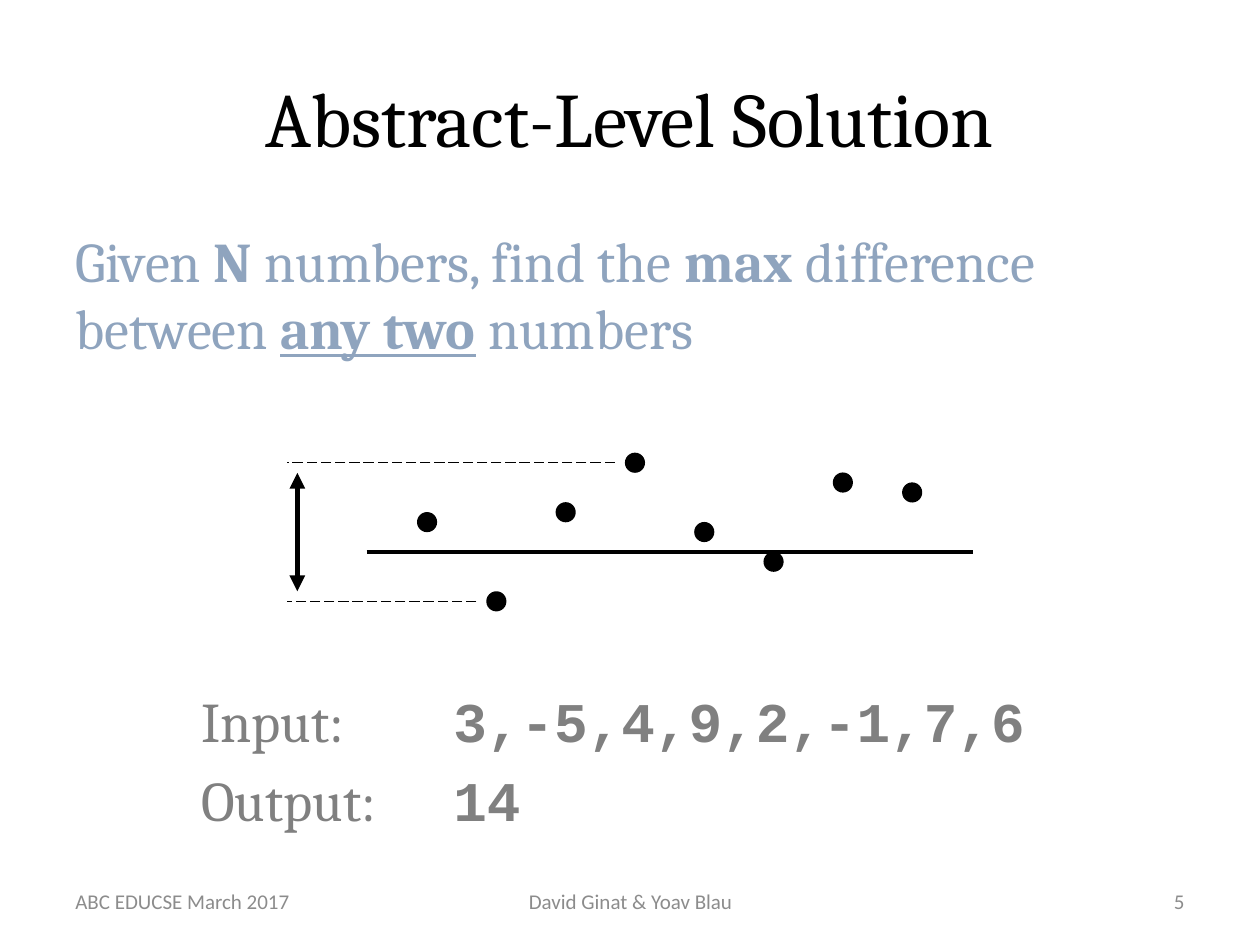
from typing import NamedTuple

from lxml import etree
from pptx import Presentation
from pptx.dml.color import RGBColor
from pptx.enum.dml import MSO_LINE
from pptx.enum.shapes import MSO_CONNECTOR, MSO_SHAPE
from pptx.enum.text import MSO_ANCHOR, PP_ALIGN
from pptx.oxml.ns import qn
from pptx.util import Inches, Pt

LEFT, CENTER, RIGHT = PP_ALIGN.LEFT, PP_ALIGN.CENTER, PP_ALIGN.RIGHT
TOP, MIDDLE = MSO_ANCHOR.TOP, MSO_ANCHOR.MIDDLE
OVAL, RECTANGLE = MSO_SHAPE.OVAL, MSO_SHAPE.RECTANGLE
STRAIGHT, LONG_DASH = MSO_CONNECTOR.STRAIGHT, MSO_LINE.LONG_DASH

SERIF, MONO, SANS = "Cambria", "Courier New", "Calibri"
BLACK, WHITE, NAVY, GRAY = "000000", "FFFFFF", "1F497D", "8C8C8C"

NUMBERS = [3, -5, 4, 9, 2, -1, 7, 6]

# Dot grid: one column per number, one row per unit of value
FIRST_X, COLUMN = 3.39, 0.55
ZERO_Y, UNIT = 4.38, 1.1 / 14
DOT = 0.16
AXIS_START, AXIS_END = 2.91, 7.72
GUIDE_X, ARROW_X = 2.28, 2.36


class Box(NamedTuple):
    left: float
    top: float
    width: float
    height: float

    def inches(self) -> list:
        return [Inches(length) for length in self]


class Run(NamedTuple):
    text: str
    bold: bool = False
    underline: bool = False
    font: str = ""


class Footer(NamedTuple):
    box: Box
    text: str
    align: PP_ALIGN


FOOTERS = [
    Footer(Box(0.5, 6.95, 2.33, 0.4), "ABC EDUCSE March 2017", LEFT),
    Footer(Box(3.42, 6.95, 3.17, 0.4), "David Ginat & Yoav Blau", CENTER),
    Footer(Box(7.17, 6.95, 2.33, 0.4), "5", RIGHT),
]

TASK = [
    Run("Given "), Run("N", bold=True), Run(" numbers, find the "),
    Run("max", bold=True), Run(" difference between "),
    Run("any two", bold=True, underline=True), Run(" numbers"),
]
EXAMPLE = [
    [Run("Input:\t"), Run(",".join(map(str, NUMBERS)), bold=True, font=MONO)],
    [Run("Output:\t"),
     Run(str(max(NUMBERS) - min(NUMBERS)), bold=True, font=MONO)],
]


def rgb(color: str) -> RGBColor:
    return RGBColor.from_string(color)


def write(frame, paragraphs: list[list[Run]], *, size: float, color: str,
          font: str = SERIF, align: PP_ALIGN = LEFT, anchor: MSO_ANCHOR = TOP,
          before: float = 0, tab: float = 0) -> None:
    frame.word_wrap = True
    frame.vertical_anchor = anchor
    for index, runs in enumerate(paragraphs):
        paragraph = frame.add_paragraph() if index else frame.paragraphs[0]
        paragraph.alignment = align
        paragraph.space_before = Pt(before)
        if tab:
            stops = etree.SubElement(paragraph._p.get_or_add_pPr(), qn("a:tabLst"))
            etree.SubElement(stops, qn("a:tab"), pos=str(Inches(tab)), algn="l")
        for part in runs:
            run = paragraph.add_run()
            run.text = part.text
            run.font.name = part.font or font
            run.font.size = Pt(size)
            run.font.bold = part.bold
            run.font.underline = part.underline
            run.font.color.rgb = rgb(color)


def add_text(slide, box: Box, paragraphs: list[list[Run]], **style) -> None:
    write(slide.shapes.add_textbox(*box.inches()).text_frame, paragraphs, **style)


def add_filled(slide, kind: MSO_SHAPE, box: Box, color: str,
               opacity: int = 100) -> None:
    shape = slide.shapes.add_shape(kind, *box.inches())
    shape.shadow.inherit = False
    shape.line.fill.background()
    shape.fill.solid()
    shape.fill.fore_color.rgb = rgb(color)
    if opacity < 100:
        tint = shape.fill._xPr.find(".//" + qn("a:srgbClr"))
        etree.SubElement(tint, qn("a:alpha"), val=str(opacity * 1000))


def add_line(slide, start: tuple[float, float], end: tuple[float, float],
             width: float, dash: MSO_LINE | None = None,
             arrows: bool = False) -> None:
    line = slide.shapes.add_connector(
        STRAIGHT, *(Inches(length) for length in (*start, *end)))
    line.line.color.rgb = rgb(BLACK)
    line.line.width = Pt(width)
    if dash:
        line.line.dash_style = dash
    if arrows:
        for tip in ("a:headEnd", "a:tailEnd"):
            etree.SubElement(line.line._get_or_add_ln(), qn(tip), type="triangle")
    etree.SubElement(line._element.spPr, qn("a:effectLst"))


def dot_x(index: int) -> float:
    return FIRST_X + index * COLUMN


def level(value: int) -> float:
    return ZERO_Y - value * UNIT


def draw_diagram(slide) -> None:
    # Zero axis and one dot per number
    add_line(slide, (AXIS_START, ZERO_Y), (AXIS_END, ZERO_Y), 2.25)
    for index, number in enumerate(NUMBERS):
        dot = Box(dot_x(index) - DOT / 2, level(number) - DOT / 2, DOT, DOT)
        add_filled(slide, OVAL, dot, BLACK)

    # Guides from the extremes, and the difference between them
    highest, lowest = max(NUMBERS), min(NUMBERS)
    for extreme in (highest, lowest):
        y = level(extreme)
        guide_end = dot_x(NUMBERS.index(extreme)) - DOT
        add_line(slide, (guide_end, y), (GUIDE_X, y), 0.75, dash=LONG_DASH)
    add_line(slide, (ARROW_X, level(highest) + DOT / 2),
             (ARROW_X, level(lowest) - DOT / 2), 3, arrows=True)


def main() -> None:
    deck = Presentation()
    deck.slide_width, deck.slide_height = Inches(10), Inches(7.5)
    slide = deck.slides.add_slide(deck.slide_layouts.get_by_name("Title Only"))

    # Title
    title = slide.shapes.title
    title.left, title.top, title.width, title.height = Box(0.5, 0.3, 9, 1.25).inches()
    write(title.text_frame, [[Run("Abstract-Level Solution")]], size=44,
          color=BLACK, align=CENTER, anchor=MIDDLE)

    # Task and example, dimmed by a translucent veil
    add_text(slide, Box(0.5, 1.75, 9, 1.25), [TASK], size=32, color=NAVY, before=6.4)
    add_text(slide, Box(1.5, 5.4, 8, 1.35), EXAMPLE, size=32, color=BLACK,
             before=6.4, tab=2)
    add_filled(slide, RECTANGLE, Box(0.35, 1.47, 9.06, 5.51), WHITE, opacity=50)

    draw_diagram(slide)

    # Footer
    for footer in FOOTERS:
        add_text(slide, footer.box, [[Run(footer.text)]], size=12, color=GRAY,
                 font=SANS, align=footer.align, anchor=MIDDLE)

    deck.save("out.pptx")


if __name__ == "__main__":
    main()
